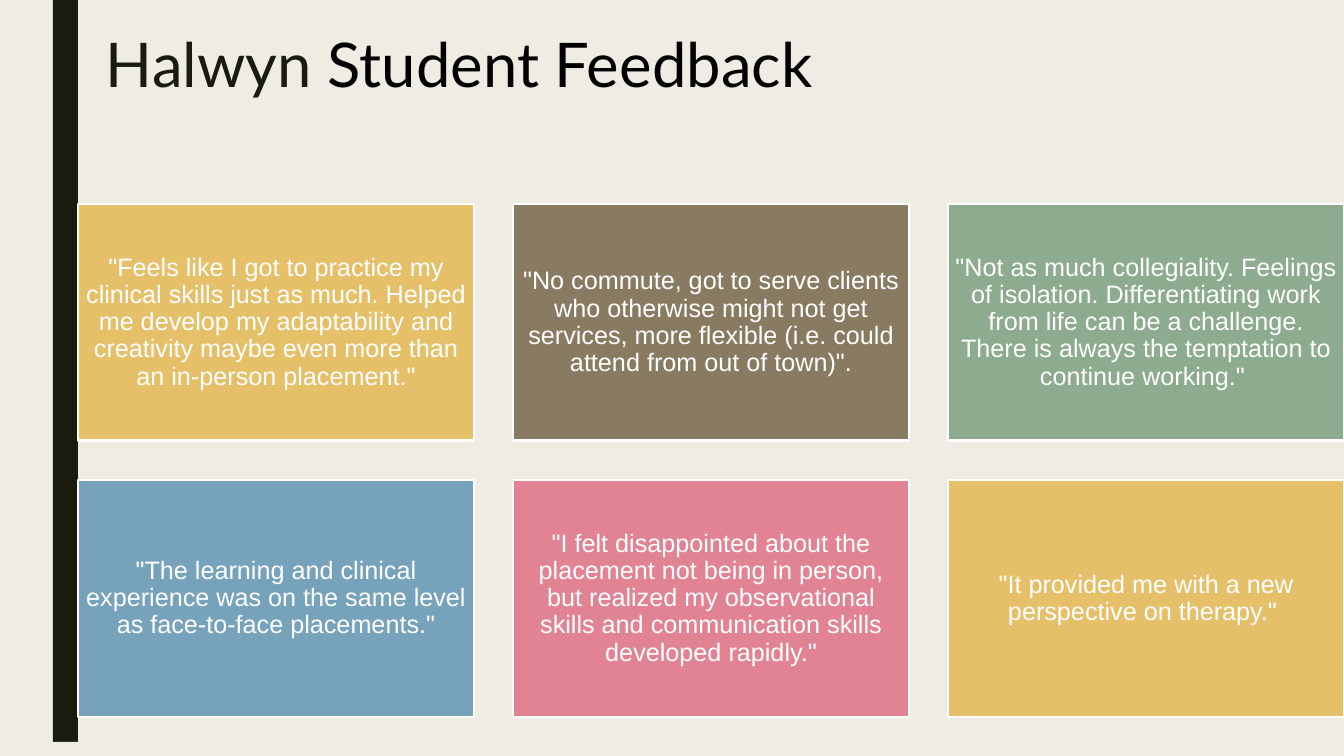
from pptx import Presentation
from pptx import util as u
from pptx.dml.color import RGBColor
from pptx.enum import shapes, text

PX = 914400 / 100.8  # EMU in one px
COLORS = {
    "paper": "EFEDE3", "ink": "191B0E", "black": "000000", "white": "FFFFFF",
    "gold": "E6C069", "brown": "897B61", "green": "8DAB8E",
    "blue": "77A2BB", "pink": "E28394",
}
QUOTES = [
    ("gold", '"Feels like I got to practice my clinical skills just as much. Helped me develop my adaptability and creativity maybe even more than an in-person placement."'),
    ("brown", '"No commute, got to serve clients who otherwise might not get services, more flexible (i.e. could attend from out of town)".'),
    ("green", '"Not as much collegiality. Feelings of isolation. Differentiating work from life can be a challenge. There is always the temptation to continue working." '),
    ("blue", '"The learning and clinical experience was on the same level as face-to-face placements."'),
    ("pink", '"I felt disappointed about the placement not being in person, but realized my observational skills and communication skills developed rapidly."'),
    ("gold", '"It provided me with a new perspective on therapy." '),
]
COLUMNS = 3
LEFT, TOP, WIDTH, HEIGHT, GAP = 78, 204, 396, 237, 39


def add_rect(page, color, *place):
    box = page.shapes.add_shape(
        shapes.MSO_SHAPE.RECTANGLE, *(round(n * PX) for n in place))
    box.shadow.inherit = False
    box.fill.solid()
    box.fill.fore_color.rgb = RGBColor.from_string(COLORS[color])
    box.line.fill.background()
    return box


def add_span(para, words, font, size, color):
    span = para.add_run()
    span.text = words
    span.font.name = font
    span.font.size = u.Pt(size)
    span.font.color.rgb = RGBColor.from_string(COLORS[color])


deck = Presentation()
deck.slide_width, deck.slide_height = round(1344 * PX), round(756 * PX)
page = deck.slides.add_slide(deck.slide_layouts[6])

# Background, side bar and bottom strip
page.background.fill.solid()
page.background.fill.fore_color.rgb = RGBColor.from_string(COLORS["paper"])
add_rect(page, "ink", 53, 0, 25, 756)
add_rect(page, "paper", 0, 742, 1344, 14)

# Title
title = page.shapes.add_textbox(*(round(n * PX) for n in (96, 30, 1248, 134)))
title.text_frame.word_wrap = True
para = title.text_frame.paragraphs[0]
para.line_spacing = 0.89
add_span(para, "Halwyn ", "Lato", 44, "ink")
add_span(para, "Student Feedback", "Lato", 44, "black")

# Grid of quotes
for index, (color, quote) in enumerate(QUOTES):
    row, column = divmod(index, COLUMNS)
    box = add_rect(page, color, LEFT + column * (WIDTH + GAP),
                   TOP + row * (HEIGHT + GAP), WIDTH, HEIGHT)
    box.line.color.rgb = RGBColor.from_string(COLORS["white"])
    box.line.width = u.Pt(2)
    frame = box.text_frame
    frame.word_wrap = True
    frame.vertical_anchor = text.MSO_ANCHOR.MIDDLE
    frame.margin_left = frame.margin_right = round(7 * PX)
    frame.margin_top = frame.margin_bottom = round(7 * PX)
    para = frame.paragraphs[0]
    para.alignment = text.PP_ALIGN.CENTER
    para.line_spacing = 0.9
    add_span(para, quote, "Arial", 18, "white")

deck.save("out.pptx")
